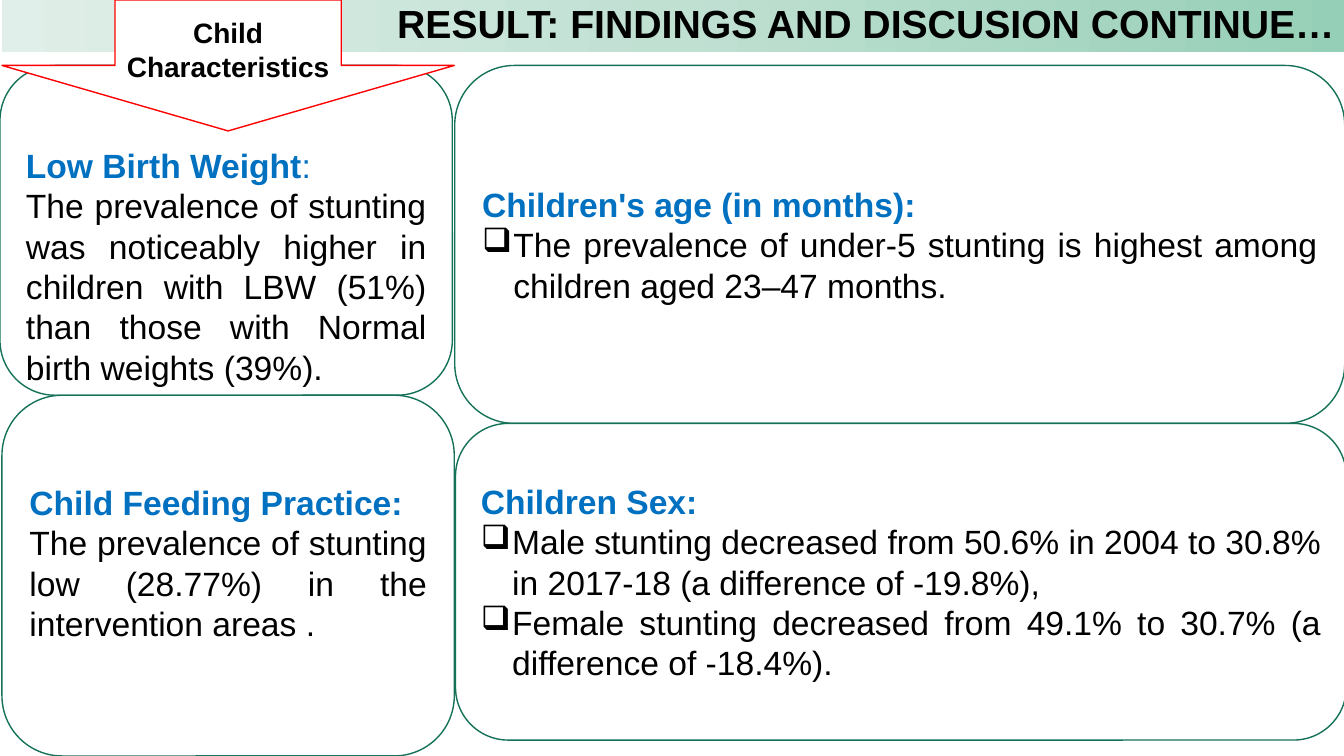
from copy import deepcopy

from lxml import etree
from pptx import Presentation
from pptx.dml.color import RGBColor
from pptx.enum.shapes import MSO_SHAPE
from pptx.enum.text import MSO_ANCHOR, PP_ALIGN
from pptx.oxml.ns import qn
from pptx.util import Cm, Pt

ROUND_RECT, DOWN_ARROW = MSO_SHAPE.ROUNDED_RECTANGLE, MSO_SHAPE.DOWN_ARROW
TOP, MIDDLE = MSO_ANCHOR.TOP, MSO_ANCHOR.MIDDLE
CENTER, RIGHT, JUSTIFY = PP_ALIGN.CENTER, PP_ALIGN.RIGHT, PP_ALIGN.JUSTIFY

BLACK = RGBColor(0x00, 0x00, 0x00)
WHITE = RGBColor(0xFF, 0xFF, 0xFF)
BLUE = RGBColor(0x00, 0x70, 0xC0)
GREEN = RGBColor(0x15, 0x72, 0x59)
RED = RGBColor(0xFF, 0x00, 0x00)
BANNER = [RGBColor(0x96, 0xCF, 0xB7), RGBColor(0xC0, 0xE0, 0xD2), RGBColor(0xE0, 0xEF, 0xE9)]

FONT = "Arial"
INDENT = Cm(0.79)
INSET = 0.13

PANELS = [
    ((11.46, 1.65, 22.43, 9.02), "Children's age (in months)", ":", True,
     ["The prevalence of under-5 stunting is highest among children aged 23–47 months."],
     True, MIDDLE, INSET, INSET),
    ((11.48, 10.67, 22.45, 7.98), "Children Sex", ":", True,
     ["Male stunting decreased from 50.6% in 2004 to 30.8% in 2017-18 (a difference of -19.8%),",
      "Female stunting decreased from 49.1% to 30.7% (a difference of -18.4%)."],
     True, MIDDLE, INSET, INSET),
    ((0, 1.65, 11.4, 8.31), "Low Birth Weight", ":", False,
     ["The prevalence of stunting was noticeably higher in children with LBW (51%) "
      "than those with Normal birth weights (39%)."],
     False, TOP, 1.6, INSET),
    ((0.05, 9.96, 11.4, 9.09), "Child Feeding Practice", ":", True,
     ["The prevalence of stunting low (28.77%) in the intervention areas ."],
     False, MIDDLE, INSET, 0.78),
]


def style_run(r, size, color, bold):
    """Set the font of a run."""
    r.font.name = FONT
    r.font.size = Pt(size)
    r.font.color.rgb = color
    r.font.bold = bold


def add_bullet(p):
    """Give a paragraph a box bullet with a hanging indent."""
    pPr = p._p.get_or_add_pPr()
    pPr.set("marL", str(INDENT))
    pPr.set("indent", str(-INDENT))
    etree.SubElement(pPr, qn("a:buChar")).set("char", "❑")


def add_outlined(slide, kind, box, line_color):
    """Add a white preset shape with a thin outline."""
    sp = slide.shapes.add_shape(kind, *map(Cm, box))
    sp.shadow.inherit = False
    sp.fill.solid()
    sp.fill.fore_color.rgb = WHITE
    sp.line.color.rgb = line_color
    sp.line.width = Pt(1)
    sp.text_frame.word_wrap = True
    return sp


def add_banner(slide, box):
    """Place the title on its gradient band."""
    sp = slide.shapes.title
    sp.left, sp.top, sp.width, sp.height = map(Cm, box)
    sp.fill.gradient()
    sp.fill.gradient_angle = 180
    stops = sp._element.spPr.find(qn("a:gradFill")).find(qn("a:gsLst"))
    stops.insert(1, deepcopy(stops[0]))
    for i, (stop, color) in enumerate(zip(sp.fill.gradient_stops, BANNER)):
        stop.position = i / 2
        stop.color.rgb = color
    tf = sp.text_frame
    tf.text = "RESULT: FINDINGS AND DISCUSION CONTINUE…"
    tf.vertical_anchor = MIDDLE
    p = tf.paragraphs[0]
    p.alignment = RIGHT
    p.line_spacing = 0.9
    style_run(p.runs[0], 28, BLACK, True)


def add_panel(slide, box, heading, colon, bold_colon, findings, bulleted, anchor, top, bottom):
    """Add a rounded panel with a blue heading and its findings."""
    tf = add_outlined(slide, ROUND_RECT, box, GREEN).text_frame
    tf.vertical_anchor = anchor
    tf.margin_top, tf.margin_bottom = Cm(top), Cm(bottom)
    p = tf.paragraphs[0]
    p.alignment = JUSTIFY
    for text, bold in ((heading, True), (colon, bold_colon)):
        r = p.add_run()
        r.text = text
        style_run(r, 24, BLUE, bold)
    for finding in findings:
        p = tf.add_paragraph()
        p.text = finding
        p.alignment = JUSTIFY
        style_run(p.runs[0], 24, BLACK, False)
        if bulleted:
            add_bullet(p)


def add_topic_arrow(slide, box):
    """Add the down arrow that names the topic."""
    tf = add_outlined(slide, DOWN_ARROW, box, RED).text_frame
    tf.vertical_anchor = MIDDLE
    tf.margin_left = tf.margin_right = 0
    tf.text = "Child\nCharacteristics"
    for p in tf.paragraphs:
        p.alignment = CENTER
        style_run(p.runs[0], 20, BLACK, True)


def main():
    """Build the slide and save it."""
    prs = Presentation()
    prs.slide_width, prs.slide_height = Cm(33.87), Cm(19.05)
    slide = prs.slides.add_slide(prs.slide_layouts[5])
    add_banner(slide, (0.05, 0, 33.83, 1.32))
    for panel in PANELS:
        add_panel(slide, *panel)
    add_topic_arrow(slide, (0.05, 0, 11.4, 3.3))
    prs.save("out.pptx")


if __name__ == "__main__":
    main()
